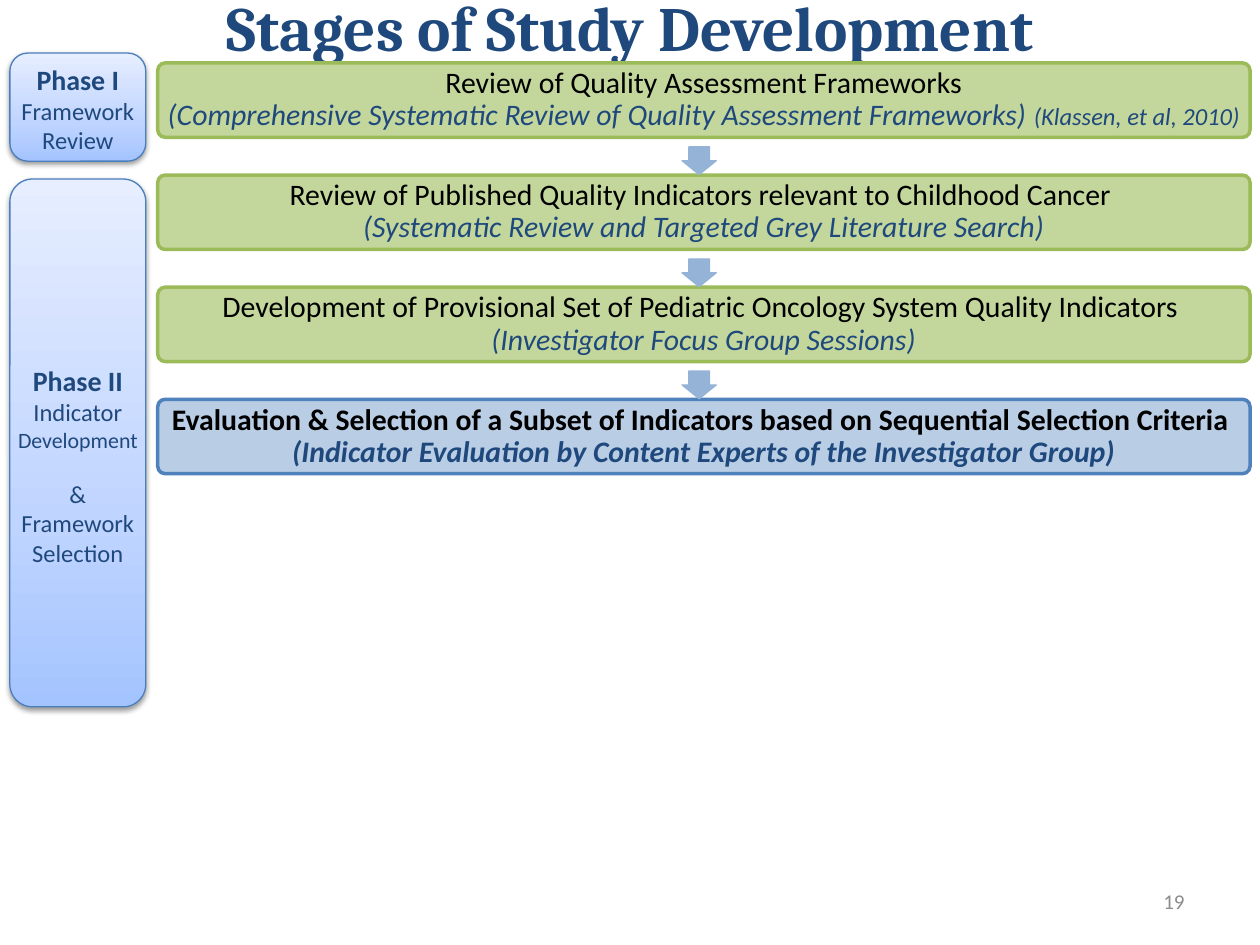
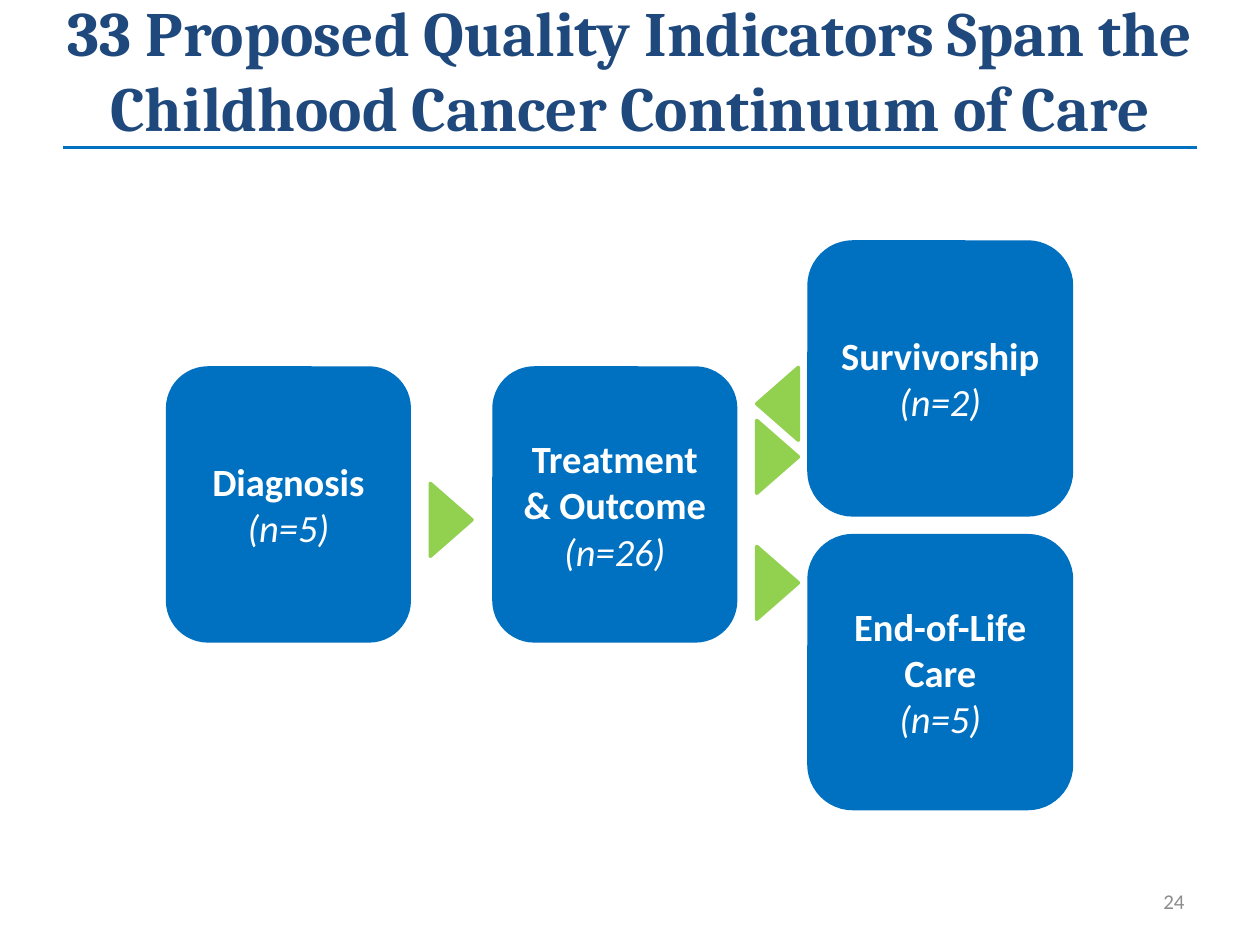
from copy import deepcopy

from lxml import etree
from pptx import Presentation
from pptx.dml import color
from pptx.enum import shapes, text
from pptx.oxml import ns
from pptx.util import Cm, Pt

NAVY, BLUE, GREEN = "1F497D", "0070C0", "92D050"
BLACK, WHITE, GREY = "000000", "FFFFFF", "8C8C8C"
ARROW = "95B3D7"
PHASE_GRADIENT = [(0, "A4C4FF"), (0.35, "BFD4FF"), (1, "E6EEFF")]
SHAPE = shapes.MSO_SHAPE
ANCHOR = text.MSO_ANCHOR
ALIGN = text.PP_ALIGN
PHASE_SHADOW = (
    f'<a:effectLst {ns.nsdecls("a")}>'
    f'<a:outerShdw blurRad="{Pt(3.1)}" dist="{Pt(1.6)}" dir="5400000" rotWithShape="0">'
    '<a:srgbClr val="000000"><a:alpha val="38000"/></a:srgbClr>'
    '</a:outerShdw></a:effectLst>'
)


def rgb(value):
    return color.RGBColor.from_string(value)


def write(shape, paragraphs, font="Calibri", align=ALIGN.CENTER, anchor=ANCHOR.MIDDLE):
    """Fill a shape with paragraphs, each a list of (text, size, colour, style) runs."""
    frame = shape.text_frame
    frame.word_wrap = True
    frame.vertical_anchor = anchor
    for number, pieces in enumerate(paragraphs):
        paragraph = frame.add_paragraph() if number else frame.paragraphs[0]
        paragraph.alignment = align
        for words, size, ink, style in pieces:
            run = paragraph.add_run()
            run.text = words
            run.font.name = font
            run.font.size = Pt(size)
            run.font.color.rgb = rgb(ink)
            run.font.bold = "b" in style
            run.font.italic = "i" in style
    return frame


prs = Presentation()
prs.slide_width, prs.slide_height = Cm(25.4), Cm(19.05)
stages, continuum = [prs.slides.add_slide(prs.slide_layouts[6]) for _ in range(2)]

# Titles and page numbers
for slide, title, top, height, page in [
    (stages, "Stages of Study Development", 0, 1.07, "19"),
    (continuum, "33 Proposed Quality Indicators Span the Childhood Cancer Continuum of Care",
     -0.2, 3.18, "24"),
]:
    heading = slide.shapes.add_textbox(Cm(0), Cm(top), Cm(25.4), Cm(height))
    write(heading, [[(title, 36, NAVY, "b")]], font="Cambria")
    footer = slide.shapes.add_textbox(Cm(18.21), Cm(17.65), Cm(5.92), Cm(1.02))
    write(footer, [[(page, 12, GREY, "")]], align=ALIGN.RIGHT)

# Slide 1: phases down the left side
for kind, top, height, text_top, paragraphs in [
    (SHAPE.FLOWCHART_ALTERNATE_PROCESS, 1.07, 2.18, 0.08,
     [[("Phase I ", 16, NAVY, "b"), ("Framework Review", 14, NAVY, "")]]),
    (SHAPE.ROUNDED_RECTANGLE, 3.61, 10.64, 3.58,
     [[("Phase II ", 16, NAVY, "b"), ("Indicator ", 14, NAVY, ""),
       ("Development", 12.5, NAVY, "")],
      [("& Framework Selection", 14, NAVY, "")]]),
]:
    phase = stages.shapes.add_shape(kind, Cm(0.2), Cm(top), Cm(2.74), Cm(height))
    phase.fill.gradient()
    phase.fill.gradient_angle = 90
    stop_list = phase._element.spPr.find(".//" + ns.qn("a:gsLst"))
    stop_list.insert(1, deepcopy(stop_list[0]))
    for stop, (position, tint) in zip(phase.fill.gradient_stops, PHASE_GRADIENT):
        stop.position = position
        stop.color.rgb = rgb(tint)
    phase.line.color.rgb = rgb("4B7EBC")
    phase.line.width = Pt(0.75)
    phase._element.spPr.append(etree.fromstring(PHASE_SHADOW))
    frame = write(phase, paragraphs, anchor=ANCHOR.TOP)
    frame.margin_left = frame.margin_right = frame.margin_bottom = 0
    frame.margin_top = Cm(text_top)
    for paragraph in frame.paragraphs[1:]:
        paragraph.space_before = Pt(15)

# Slide 1: chain of steps, the current one highlighted
steps = [
    ("Review of Quality Assessment Frameworks",
     "(Comprehensive Systematic Review of Quality Assessment Frameworks) ",
     "(Klassen, et al, 2010)"),
    ("Review of Published Quality Indicators relevant to Childhood Cancer ",
     "(Systematic Review and Targeted Grey Literature Search)", ""),
    ("Development of Provisional Set of Pediatric Oncology System Quality Indicators ",
     "(Investigator Focus Group Sessions)", ""),
    ("Evaluation & Selection of a Subset of Indicators based on Sequential Selection Criteria ",
     "(Indicator Evaluation by Content Experts of the Investigator Group)", ""),
]
for number, (step, method, citation) in enumerate(steps):
    top = 1.27 + 2.26 * number
    current = number == len(steps) - 1
    weight = "b" if current else ""
    bar = stages.shapes.add_shape(
        SHAPE.ROUNDED_RECTANGLE, Cm(3.18), Cm(top), Cm(22.02), Cm(1.5))
    bar.adjustments[0] = 0.1
    bar.shadow.inherit = False
    bar.fill.solid()
    bar.fill.fore_color.rgb = rgb("B9CDE5" if current else "C3D69B")
    bar.line.color.rgb = rgb("4F81BD" if current else "9BBB59")
    bar.line.width = Pt(2)
    method_line = [(method, 17, NAVY, weight + "i")]
    if citation:
        method_line.append((citation, 14, NAVY, "i"))
    frame = write(bar, [[(step, 17, BLACK, weight)], method_line])
    frame.margin_left = frame.margin_right = Cm(0.03)
    for paragraph in frame.paragraphs:
        paragraph.line_spacing = 0.9
    if number:
        arrow = stages.shapes.add_shape(
            SHAPE.DOWN_ARROW, Cm(13.75), Cm(top - 0.57), Cm(0.69), Cm(0.56))
        arrow.adjustments[0] = 0.6
        arrow.shadow.inherit = False
        arrow.fill.solid()
        arrow.fill.fore_color.rgb = rgb(ARROW)
        arrow.line.color.rgb = rgb(ARROW)
        arrow.line.width = Pt(0.75)

# Slide 2: rule under the title
rule = continuum.shapes.add_connector(
    shapes.MSO_CONNECTOR.STRAIGHT, Cm(1.27), Cm(2.97), Cm(24.13), Cm(2.97))
rule.line.color.rgb = rgb(BLUE)
rule.line.width = Pt(1.5)
etree.SubElement(rule._element.spPr, ns.qn("a:effectLst"))

# Slide 2: stages of care
for stage, count, left, top, width in [
    ("Diagnosis", 5, 3.38, 7.42, 4.87),
    ("Treatment & Outcome", 26, 9.96, 7.42, 4.87),
    ("Survivorship", 2, 16.31, 4.88, 5.29),
    ("End-of-Life Care", 5, 16.31, 10.8, 5.29),
]:
    card = continuum.shapes.add_shape(
        SHAPE.ROUNDED_RECTANGLE, Cm(left), Cm(top), Cm(width), Cm(5.5))
    card.shadow.inherit = False
    card.fill.solid()
    card.fill.fore_color.rgb = rgb(BLUE)
    card.line.color.rgb = rgb(BLUE)
    card.line.width = Pt(2)
    write(card, [[(stage, 22, WHITE, "b")], [(f"(n={count})", 22, WHITE, "i")]])

# Slide 2: direction of care between the stages
for left, top, turn in [
    (8.36, 10.06, 90), (14.94, 11.33, 90), (14.94, 8.79, 90), (14.94, 7.72, 270),
]:
    pointer = continuum.shapes.add_shape(
        SHAPE.ISOSCELES_TRIANGLE, Cm(left), Cm(top), Cm(1.47), Cm(0.84))
    pointer.rotation = turn
    pointer.shadow.inherit = False
    pointer.fill.solid()
    pointer.fill.fore_color.rgb = rgb(GREEN)
    pointer.line.color.rgb = rgb(GREEN)
    pointer.line.width = Pt(2)

prs.save("out.pptx")
